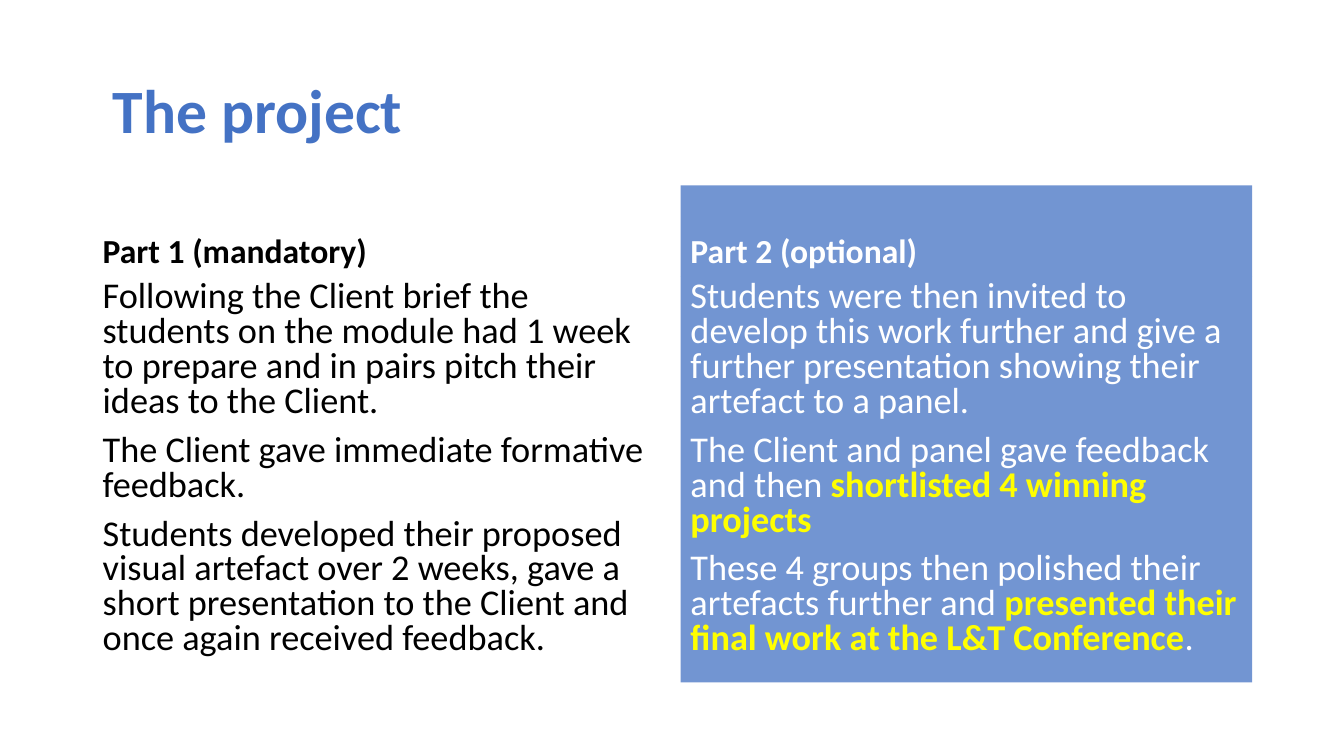
from dataclasses import dataclass

from pptx import Presentation
from pptx.dml.color import RGBColor
from pptx.enum.shapes import MSO_SHAPE
from pptx.enum.text import MSO_ANCHOR, PP_ALIGN
from pptx.util import Inches, Pt

RECTANGLE = MSO_SHAPE.RECTANGLE
TOP, MIDDLE, BOTTOM = MSO_ANCHOR.TOP, MSO_ANCHOR.MIDDLE, MSO_ANCHOR.BOTTOM
LEFT = PP_ALIGN.LEFT


@dataclass(frozen=True)
class Theme:
    font: str = "Calibri"
    title_color: str = "4472C4"
    panel: str = "7295D2"
    dark: str = "000000"
    light: str = "FFFFFF"
    highlight: str = "FFFF00"
    title_size: float = 44
    heading_size: float = 24
    body_size: float = 25.9


class SlideBuilder:
    def __init__(self, slide, theme):
        self.slide = slide
        self.theme = theme

    def fill_text(self, shape, paragraphs, size, color, anchor, line_spacing, space_before):
        """Each paragraph is a list of (text, bold, color) runs; color None means the default."""
        frame = shape.text_frame
        frame.word_wrap = True
        frame.vertical_anchor = anchor
        for index, runs in enumerate(paragraphs):
            paragraph = frame.add_paragraph() if index else frame.paragraphs[0]
            paragraph.alignment = LEFT
            paragraph.line_spacing = line_spacing
            paragraph.space_before = Pt(space_before)
            for text, bold, run_color in runs:
                run = paragraph.add_run()
                run.text = text
                run.font.name = self.theme.font
                run.font.size = Pt(size)
                run.font.bold = bold
                run.font.color.rgb = RGBColor.from_string(run_color or color)

    def box(self, left, top, width, height, fill=None):
        area = Inches(left), Inches(top), Inches(width), Inches(height)
        if fill is None:
            return self.slide.shapes.add_textbox(*area)
        shape = self.slide.shapes.add_shape(RECTANGLE, *area)
        shape.shadow.inherit = False
        shape.fill.solid()
        shape.fill.fore_color.rgb = RGBColor.from_string(fill)
        shape.line.fill.background()
        return shape

    def title(self, text):
        shape = self.box(1.02, 0.4, 11.39, 1.45)
        self.fill_text(shape, [[(text, True, None)]], self.theme.title_size,
                       self.theme.title_color, MIDDLE, 0.9, 0)

    def column(self, left, width, heading, paragraphs, color, fill=None):
        heading_box = self.box(left, 1.84, width, 0.9, fill)
        self.fill_text(heading_box, [[(heading, True, None)]], self.theme.heading_size,
                       color, BOTTOM, 0.9, 10)
        body_box = self.box(left, 2.74, width, 4.03, fill)
        self.fill_text(body_box, paragraphs, self.theme.body_size, color, TOP, 0.8, 10)


def plain(text):
    return text, False, None


def main():
    presentation = Presentation()
    presentation.slide_width = Inches(13.33)
    presentation.slide_height = Inches(7.5)
    theme = Theme()
    slide = presentation.slides.add_slide(presentation.slide_layouts[6])
    builder = SlideBuilder(slide, theme)

    def strong(text):
        return text, True, theme.highlight

    # Title
    builder.title("The project")

    # Mandatory part
    builder.column(0.92, 5.64, "Part 1 (mandatory)", [
        [plain("Following the Client brief the students on the module had 1 week "
               "to prepare and in pairs pitch their ideas to the Client.")],
        [plain("The Client gave immediate formative feedback.")],
        [plain("Students developed their proposed visual artefact over 2 weeks, gave a "
               "short presentation to the Client and once again received feedback.")],
    ], theme.dark)

    # Optional part on a blue panel
    builder.column(6.75, 5.67, "Part 2 (optional)", [
        [plain("Students were then invited to develop this work further and give a "
               "further presentation showing their artefact to a panel.")],
        [plain("The Client and panel gave feedback and then "),
         strong("shortlisted 4 winning projects")],
        [plain("These 4 groups then polished their artefacts further and "),
         strong("presented their final work at the L&T Conference"),
         plain(".")],
    ], theme.light, theme.panel)

    presentation.save("out.pptx")


if __name__ == "__main__":
    main()
